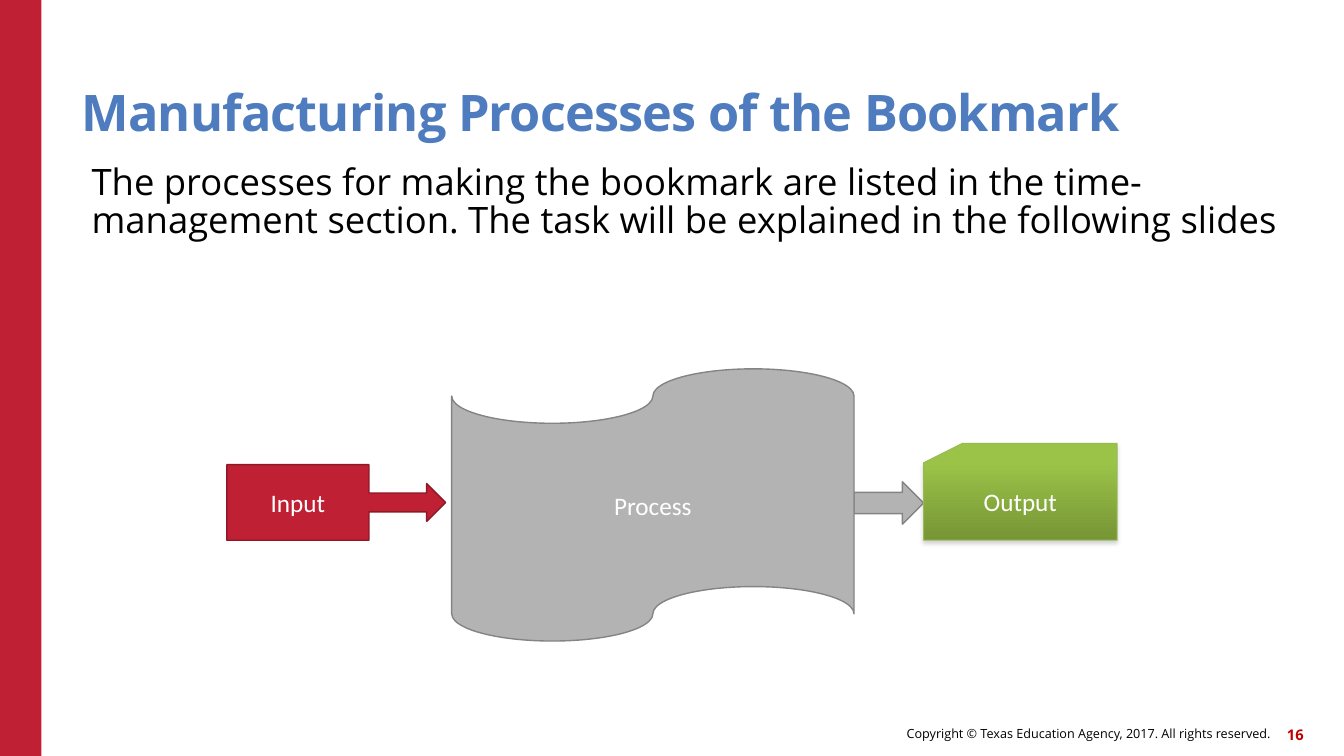
from lxml import etree
from pptx import Presentation
from pptx import util as u
from pptx.dml.color import RGBColor
from pptx.enum import shapes, text
from pptx.oxml.ns import qn

In = u.Inches
MSO = shapes.MSO_SHAPE
AL = text.PP_ALIGN
AN = text.MSO_ANCHOR


def rgb(value):
    return RGBColor.from_string(value)


def write(sp, words, size, font, color, align, anchor, bold=False):
    tf = sp.text_frame
    tf.word_wrap = True
    tf.auto_size = text.MSO_AUTO_SIZE.NONE
    tf.vertical_anchor = anchor
    p = tf.paragraphs[0]
    p.alignment = align
    r = p.add_run()
    r.text = words
    r.font.size = u.Pt(size)
    r.font.name = font
    r.font.bold = bold
    r.font.color.rgb = rgb(color)
    return tf


prs = Presentation()
prs.slide_width = In(13.33)
prs.slide_height = In(7.5)
s = prs.slides.add_slide(prs.slide_layouts[5])

bar = s.shapes.add_shape(MSO.RECTANGLE, 0, 0, In(0.41), In(7.5))
bar.shadow.inherit = False
bar.fill.solid()
bar.fill.fore_color.rgb = rgb("C02033")
bar.line.fill.background()

title = s.shapes.title
title.left, title.top, title.width, title.height = In(0.81), In(0.45), In(11), In(0.96)
tf = write(title, "Manufacturing Processes of the Bookmark", 36, "Open Sans",
           "4E7CBE", AL.LEFT, AN.BOTTOM, True)
tf.margin_left = tf.margin_top = tf.margin_right = tf.margin_bottom = 0
tf.paragraphs[0].line_spacing = 0.9
tf.paragraphs[0].runs[0].font._element.set("spc", "-60")

body = s.shapes.add_textbox(In(0.81), In(1.55), In(12.09), In(5.18))
tf = write(body, "The processes for making the bookmark are listed in the time-management "
           "section. The task will be explained in the following slides",
           26, "Open Sans", "000000", AL.LEFT, AN.TOP)
tf.margin_top = In(0.09)
tf.paragraphs[0].line_spacing = 0.87

footers = [
    ("Copyright © Texas Education Agency, 2017. All rights reserved.",
     6.14, 7.12, 6.46, 9, "000000", False),
    ("16", 12.51, 7.13, 0.42, 10.5, "C00000", True),
]
for words, left, top, width, size, color, bold in footers:
    sp = s.shapes.add_textbox(In(left), In(top), In(width), In(0.32))
    tf = write(sp, words, size, "Open Sans", color, AL.RIGHT, AN.MIDDLE, bold)
    tf.margin_left = tf.margin_top = tf.margin_right = tf.margin_bottom = 0

steps = [
    (MSO.RIGHT_ARROW, "", 8.47, 4.78, 0.69, 0.42, "B3B3B3", "848484", 1),
    (MSO.RIGHT_ARROW_CALLOUT, "Input", 2.25, 4.61, 2.17, 0.75, "C02033", "8E1826", 1),
    (MSO.FLOWCHART_PUNCHED_TAPE, "Process", 4.48, 3.66, 3.99, 2.7, "B3B3B3", "848484", 1),
    (MSO.FLOWCHART_CARD, "Output", 9.16, 4.4, 1.92, 0.96, "9BC348", "98B954", 0.75),
]
for kind, words, left, top, width, height, fill, line, weight in steps:
    sp = s.shapes.add_shape(kind, In(left), In(top), In(width), In(height))
    sp.shadow.inherit = False
    sp.fill.solid()
    sp.fill.fore_color.rgb = rgb(fill)
    sp.line.color.rgb = rgb(line)
    sp.line.width = u.Pt(weight)
    if words:
        write(sp, words, 18, "Calibri", "FFFFFF", AL.CENTER, AN.MIDDLE)

output = sp
output.fill.gradient()
output.fill.gradient_angle = 270
for stop, (position, color) in zip(output.fill.gradient_stops, [(0.2, "9BC348"), (1, "769535")]):
    stop.position = position
    stop.color.rgb = rgb(color)

effects = output._element.spPr.find(qn("a:effectLst"))
shadow = etree.SubElement(effects, qn("a:outerShdw"), blurRad=str(u.Pt(3.1)),
                          dist=str(u.Pt(1.8)), dir="5400000", rotWithShape="0")
tint = etree.SubElement(shadow, qn("a:srgbClr"), val="808080")
etree.SubElement(tint, qn("a:alpha"), val="35000")

prs.save("out.pptx")
